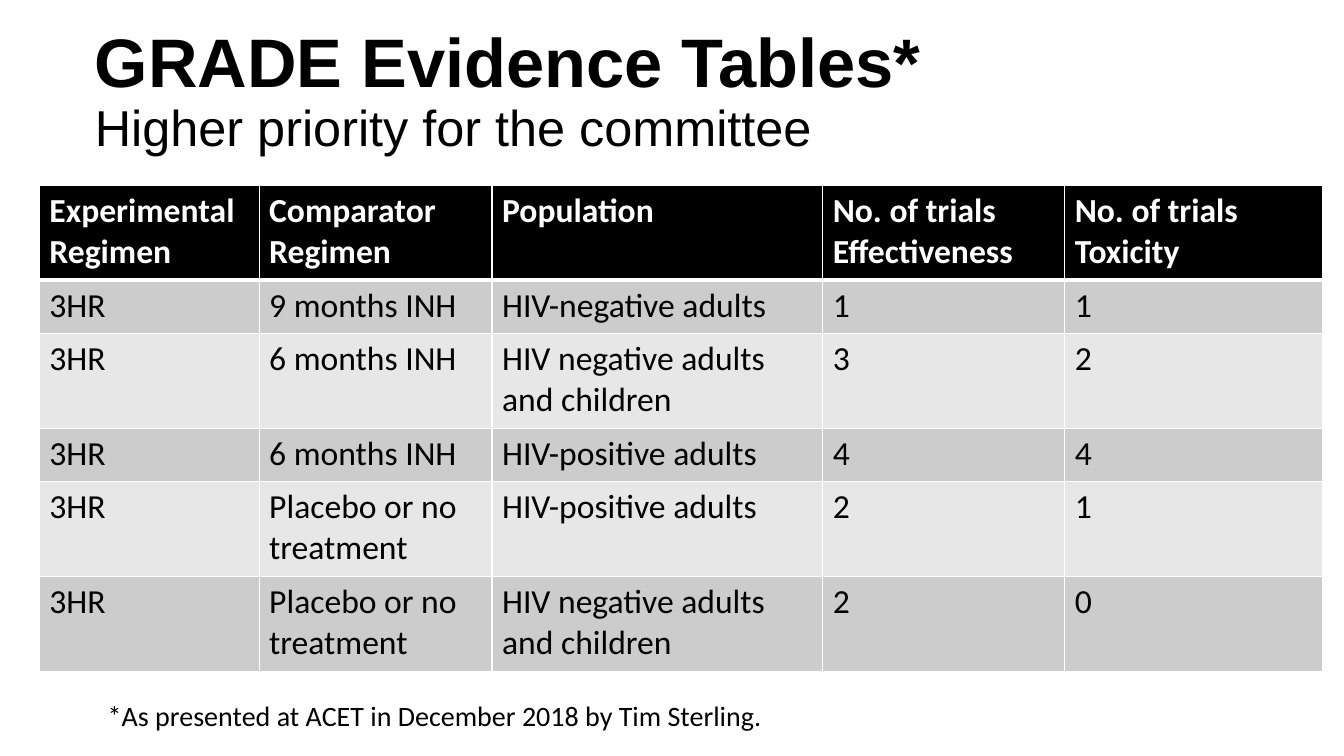
from pptx import Presentation
from pptx.dml.color import RGBColor
from pptx.enum.text import MSO_ANCHOR, MSO_AUTO_SIZE, PP_ALIGN
from pptx.oxml.ns import qn
from pptx.util import Inches, Pt
from lxml import etree

MIDDLE = MSO_ANCHOR.MIDDLE
NO_AUTOFIT = MSO_AUTO_SIZE.NONE
LEFT = PP_ALIGN.LEFT

COLORS = {"black": "000000", "white": "FFFFFF", "dark_band": "CCCCCC", "light_band": "E7E7E7"}

COLUMN_WIDTHS = [2.18, 2.31, 3.28, 2.4, 2.56]
ROW_HEIGHTS = [0.94, 0.53, 0.94, 0.53, 0.94, 0.94]
ROWS = [
    ["Experimental Regimen", "Comparator Regimen", "Population",
     "No. of trials\nEffectiveness", "No. of trials\nToxicity"],
    ["3HR", "9 months INH", "HIV-negative adults", "1", "1"],
    ["3HR", "6 months INH", "HIV negative adults and children", "3", "2"],
    ["3HR", "6 months INH", "HIV-positive adults", "4", "4"],
    ["3HR", "Placebo or no treatment", "HIV-positive adults", "2", "1"],
    ["3HR", "Placebo or no treatment", "HIV negative adults and children", "2", "0"],
]


def add_span(para, text, font, size, color, bold=False):
    span = para.add_run()
    span.text = text
    span.font.name = font
    span.font.size = Pt(size)
    span.font.bold = bold
    span.font.color.rgb = RGBColor.from_string(COLORS[color])


def add_border(cell, side, width):
    line = etree.SubElement(cell._tc.get_or_add_tcPr(), qn(f"a:{side}"), w=str(Pt(width)))
    fill = etree.SubElement(line, qn("a:solidFill"))
    etree.SubElement(fill, qn("a:srgbClr"), val=COLORS["white"])


deck = Presentation()
deck.slide_width = Inches(13.33)
deck.slide_height = Inches(7.5)
page = deck.slides.add_slide(deck.slide_layouts[5])

# Title with a subtitle line
title = page.shapes.title
title.left, title.top = Inches(0.84), Inches(0.22)
title.width, title.height = Inches(11.5), Inches(1.4)
title.text_frame.auto_size = NO_AUTOFIT
title.text_frame.word_wrap = True
title.text_frame.vertical_anchor = MIDDLE
para = title.text_frame.paragraphs[0]
para.alignment = LEFT
para.line_spacing = 0.9
add_span(para, "GRADE Evidence Tables*", "Arial", 49, "black", bold=True)
para.add_line_break()
add_span(para, "Higher priority for the committee", "Arial", 36, "black")

# Evidence table
table = page.shapes.add_table(
    len(ROWS), len(COLUMN_WIDTHS), Inches(0.39), Inches(1.84),
    Inches(sum(COLUMN_WIDTHS)), Inches(sum(ROW_HEIGHTS))).table
for column, width in zip(table.columns, COLUMN_WIDTHS):
    column.width = Inches(width)
for row, height in zip(table.rows, ROW_HEIGHTS):
    row.height = Inches(height)

for row_index, texts in enumerate(ROWS):
    header = row_index == 0
    band = "black" if header else "dark_band" if row_index % 2 else "light_band"
    for column_index, text in enumerate(texts):
        cell = table.cell(row_index, column_index)
        # Borders come before the fill in the cell properties
        for side in ("lnL", "lnR", "lnT", "lnB"):
            thick = (header and side == "lnB") or (row_index == 1 and side == "lnT")
            add_border(cell, side, 3 if thick else 1)
        cell.fill.solid()
        cell.fill.fore_color.rgb = RGBColor.from_string(COLORS[band])
        for line_index, line in enumerate(text.split("\n")):
            frame = cell.text_frame
            para = frame.add_paragraph() if line_index else frame.paragraphs[0]
            add_span(para, line, "Calibri", 24, "white" if header else "black", bold=header)

# Footnote
footnote = page.shapes.add_textbox(Inches(0.97), Inches(6.88), Inches(6.76), Inches(0.74))
footnote.text_frame.word_wrap = False
para = footnote.text_frame.paragraphs[0]
para.alignment = LEFT
add_span(para, "*As presented at ACET in December 2018 by Tim Sterling.", "Calibri", 20, "black")

deck.save("out.pptx")
